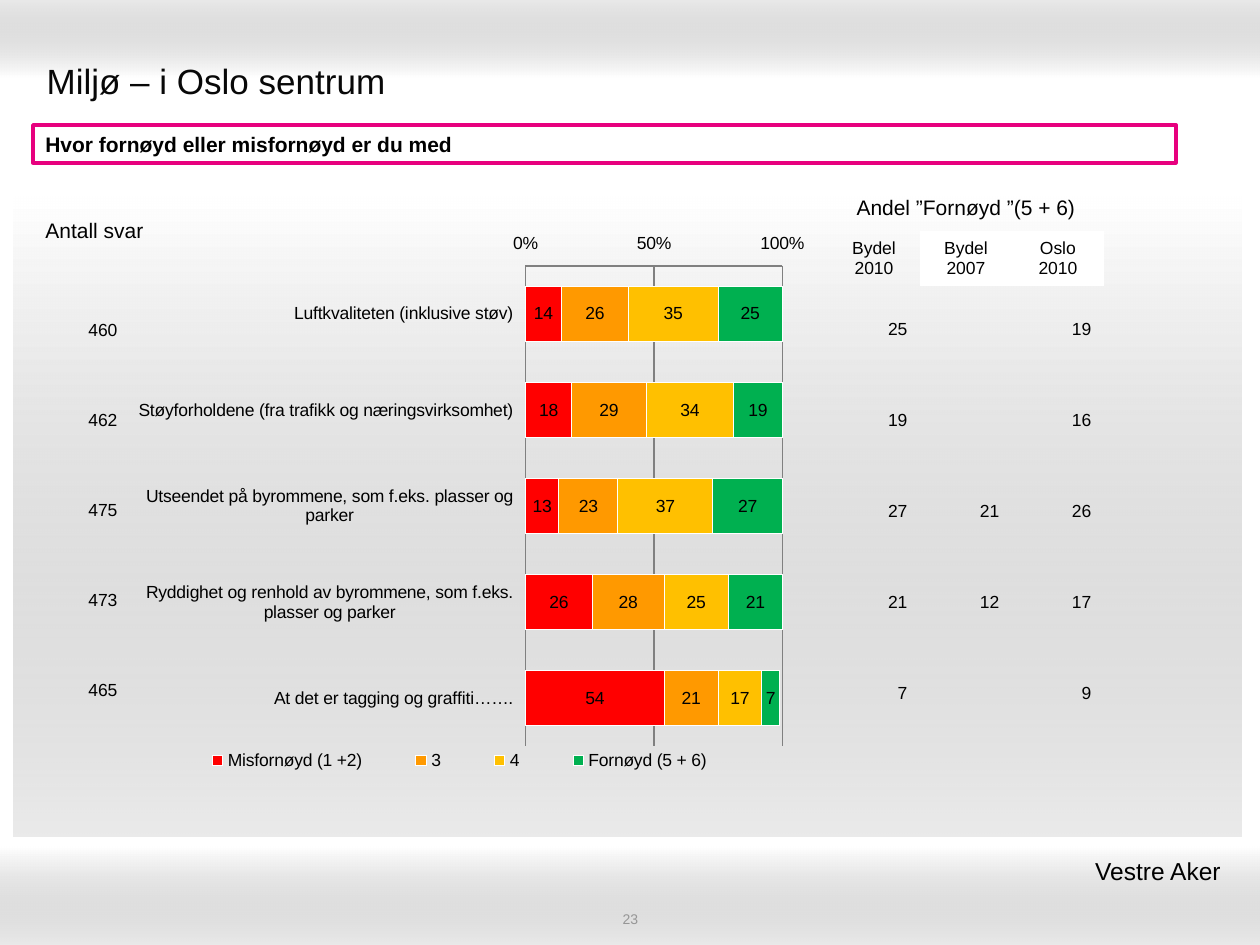
from lxml import etree
from pptx import Presentation, util as u
from pptx.chart.data import CategoryChartData
from pptx.dml.color import RGBColor
from pptx.enum import chart as ch, shapes, text
from pptx.oxml import parse_xml
from pptx.oxml.ns import nsdecls, qn

COLORS = {"ink": "000000", "title": "080808", "muted": "969696", "white": "FFFFFF",
          "band": "999999", "accent": "E7007E", "grid": "808080"}
FONT = "Arial"
NO_GRID = "{2D5ABB26-0587-4C30-8999-92F81FD0307C}"
BANDS = [((0, 0, 1260, 78), 270), ((0, 847, 1260, 98), 90), ((14, 197, 1227, 640), 90)]
CATEGORIES = ["Luftkvaliteten (inklusive støv)",
              "Støyforholdene (fra trafikk og næringsvirksomhet)",
              "Utseendet på byrommene, som f.eks. plasser og parker",
              "Ryddighet og renhold av byrommene, som f.eks. plasser og parker",
              "At det er tagging og graffiti……."]
SERIES = [("Misfornøyd (1 +2)", (14, 18, 13, 26, 54), "FF0000"),
          ("3", (26, 29, 23, 28, 21), "FF9900"),
          ("4", (35, 34, 37, 25, 17), "FFC000"),
          ("Fornøyd (5 + 6)", (25, 19, 27, 21, 7), "00B050")]
SHARES = [("25", "", "19"), ("19", "", "16"), ("27", "21", "26"), ("21", "12", "17"), ("7", "", "9")]
HEADER = [("Andel ”Fornøyd ”(5 + 6)", "", ""), ("Bydel\n2010", "Bydel\n2007", "Oslo\n2010")]
COUNTS = [("460",), ("462",), ("475",), ("473",), ("465",)]
LEFT, CENTER, RIGHT = text.PP_ALIGN.LEFT, text.PP_ALIGN.CENTER, text.PP_ALIGN.RIGHT


def px(n):
    return u.Emu(n * 914400 // 126)


def rgb(name):
    return RGBColor.from_string(COLORS.get(name, name))


def set_font(font, size, color="ink", bold=False):
    font.name, font.size, font.bold = FONT, u.Pt(size), bold
    font.color.rgb = rgb(color)


def write(tf, content, size, color="ink", align=LEFT, bold=False):
    tf.text = content
    for p in tf.paragraphs:
        p.alignment = align
        set_font(p.font, size, color, bold)


def add_rect(s, box):
    sp = s.shapes.add_shape(shapes.MSO_SHAPE.RECTANGLE, *map(px, box))
    sp.shadow.inherit = False
    return sp


def add_band(s, box, angle):
    sp = add_rect(s, box)
    sp.line.fill.background()
    gradient = parse_xml(
        f'<a:gradFill {nsdecls("a")} rotWithShape="1"><a:gsLst>'
        f'<a:gs pos="0"><a:srgbClr val="{COLORS["white"]}"/></a:gs>'
        f'<a:gs pos="100000"><a:srgbClr val="{COLORS["band"]}"><a:alpha val="20000"/></a:srgbClr></a:gs>'
        f'</a:gsLst><a:lin ang="{angle * 60000}" scaled="0"/></a:gradFill>')
    sp._element.spPr.find(qn("a:prstGeom")).addnext(gradient)


def add_text(s, box, content, size, color, align, anchor):
    tf = s.shapes.add_textbox(*map(px, box)).text_frame
    tf.word_wrap = True
    tf.vertical_anchor = anchor
    write(tf, content, size, color, align)


def add_table(s, left, top, col_width, heights, rows, size, align):
    cols = len(rows[0])
    frame = s.shapes.add_table(len(rows), cols, px(left), px(top),
                               px(col_width * cols), px(sum(heights)))
    table = frame.table
    table.first_row = table.horz_banding = False
    table._tbl.tblPr.find(qn("a:tableStyleId")).text = NO_GRID
    for column in table.columns:
        column.width = px(col_width)
    for row, height, values in zip(table.rows, heights, rows):
        row.height = px(height)
        for cell, value in zip(row.cells, values):
            cell.fill.background()
            cell.vertical_anchor = text.MSO_ANCHOR.MIDDLE
            write(cell.text_frame, value, size, align=align)
    return table


def place(parent, after, x, y, w, h, inner=False):
    target = '<c:layoutTarget val="inner"/>' if inner else ""
    layout = parse_xml(
        f'<c:layout {nsdecls("c")}><c:manualLayout>{target}'
        '<c:xMode val="edge"/><c:yMode val="edge"/>'
        f'<c:x val="{x}"/><c:y val="{y}"/><c:w val="{w}"/><c:h val="{h}"/>'
        '</c:manualLayout></c:layout>')
    old = parent.find(qn("c:layout"))
    if old is not None:
        parent.remove(old)
    if after is None:
        parent.insert(0, layout)
    else:
        after.addnext(layout)


def add_chart(s):
    data = CategoryChartData(number_format="0")
    data.categories = CATEGORIES
    for name, values, _ in SERIES:
        data.add_series(name, values)
    chart = s.shapes.add_chart(ch.XL_CHART_TYPE.BAR_STACKED,
                               *map(px, (123, 226, 694, 572)), data).chart
    set_font(chart.font, 10)
    chart.has_title = False
    plot = chart.plots[0]
    plot.gap_width, plot.overlap, plot.vary_by_categories = 75, 100, False
    for series, (_, _, color) in zip(plot.series, SERIES):
        series.format.fill.solid()
        series.format.fill.fore_color.rgb = rgb(color)
        series.format.line.color.rgb = rgb("white")
        labels = series.data_labels
        labels.show_value = True
        labels.number_format, labels.number_format_is_linked = "0", False
        set_font(labels.font, 10)
    cat, val = chart.category_axis, chart.value_axis
    cat.reverse_order = True
    cat.format.line.fill.background()
    cat.major_tick_mark = ch.XL_TICK_MARK.NONE
    val.minimum_scale, val.maximum_scale, val.major_unit = 0, 100, 50
    val.major_tick_mark = ch.XL_TICK_MARK.INSIDE
    val.has_major_gridlines = True
    val.tick_labels.number_format = "General\\%"
    val.tick_labels.number_format_is_linked = False
    for line in (val.format.line, val.major_gridlines.format.line):
        line.color.rgb = rgb("grid")
        line.width = u.Pt(0.75)
    for axis in (cat, val):
        axis.tick_label_position = ch.XL_TICK_LABEL_POSITION.LOW
        set_font(axis.tick_labels.font, 10)
    chart.has_legend = True
    legend = chart.legend
    legend.position = ch.XL_LEGEND_POSITION.BOTTOM
    legend.include_in_layout = False
    set_font(legend.font, 10)
    place(chart._chartSpace.chart.plotArea, None, 0.58, 0.07, 0.37, 0.84, True)
    place(legend._element, legend._element.find(qn("c:legendPos")), 0.06, 0.91, 0.85, 0.05)


def main():
    prs = Presentation()
    prs.slide_width, prs.slide_height = px(1260), px(945)
    s = prs.slides.add_slide(prs.slide_layouts[5])
    for box, angle in BANDS:
        add_band(s, box, angle)

    title = s.shapes.title
    title.left, title.top, title.width, title.height = map(px, (34, 46, 1191, 70))
    title.text_frame.vertical_anchor = text.MSO_ANCHOR.MIDDLE
    write(title.text_frame, "Miljø – i Oslo sentrum", 20, "title")
    s.shapes._spTree.append(title._element)

    question = add_rect(s, (33, 125, 1143, 38))
    question.fill.solid()
    question.fill.fore_color.rgb = rgb("white")
    question.line.color.rgb = rgb("accent")
    question.line.width = u.Pt(2)
    write(question.text_frame, "Hvor fornøyd eller misfornøyd er du med", 12, bold=True)

    add_chart(s)
    add_table(s, 828, 284, 92, [91] * 5, SHARES, 10, RIGHT)
    header = add_table(s, 828, 185, 92, [46, 55], HEADER, 10, CENTER)
    header.cell(0, 0).merge(header.cell(0, 2))
    header.cell(0, 0).text_frame.paragraphs[0].font.size = u.Pt(12)
    for col in (1, 2):
        fill = header.cell(1, col).fill
        fill.solid()
        fill.fore_color.rgb = rgb("white")
    add_table(s, 64, 286, 66, [90] * 5, COUNTS, 10, RIGHT)
    add_table(s, 5, 194, 179, [74], [("Antall svar",)], 12, CENTER)

    add_text(s, (769, 850, 471, 43), "Vestre Aker ", 14, "ink", RIGHT, text.MSO_ANCHOR.TOP)
    add_text(s, (431, 910, 399, 18), "23", 8, "muted", CENTER, text.MSO_ANCHOR.MIDDLE)
    prs.save("out.pptx")


if __name__ == "__main__":
    main()
